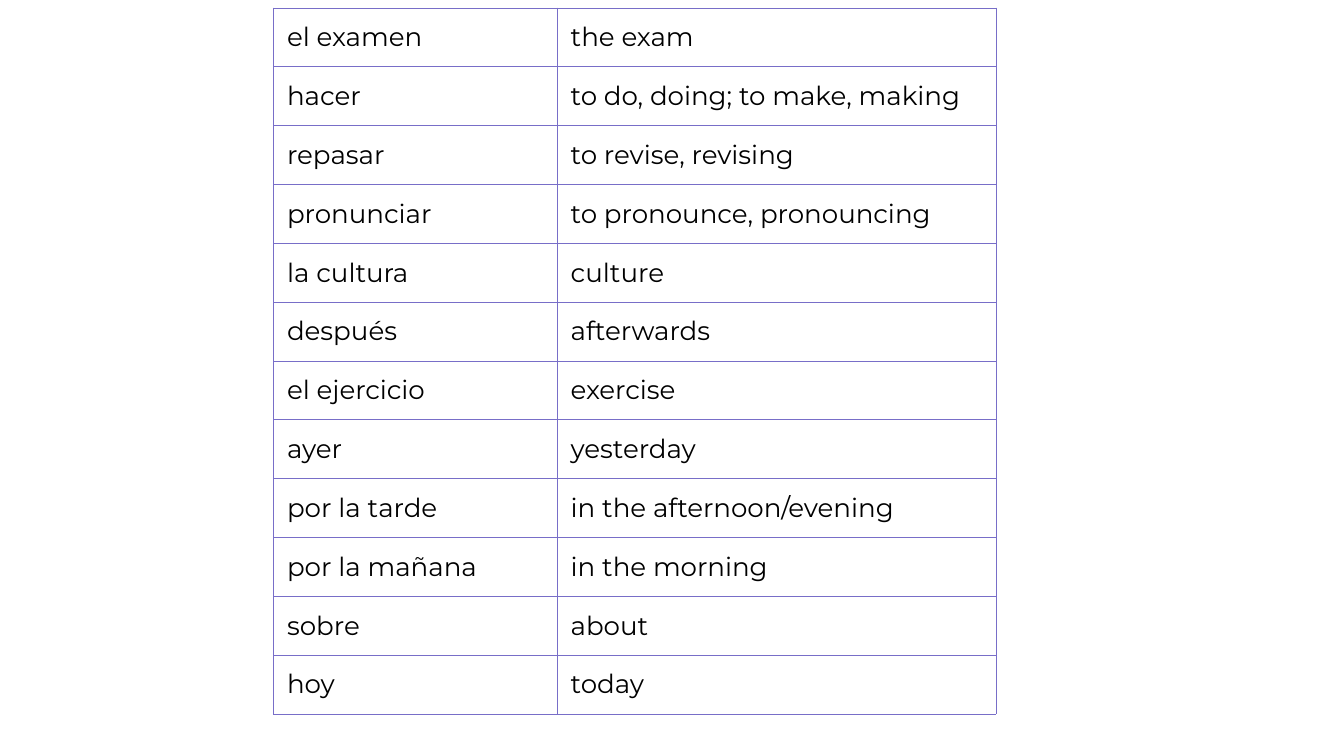
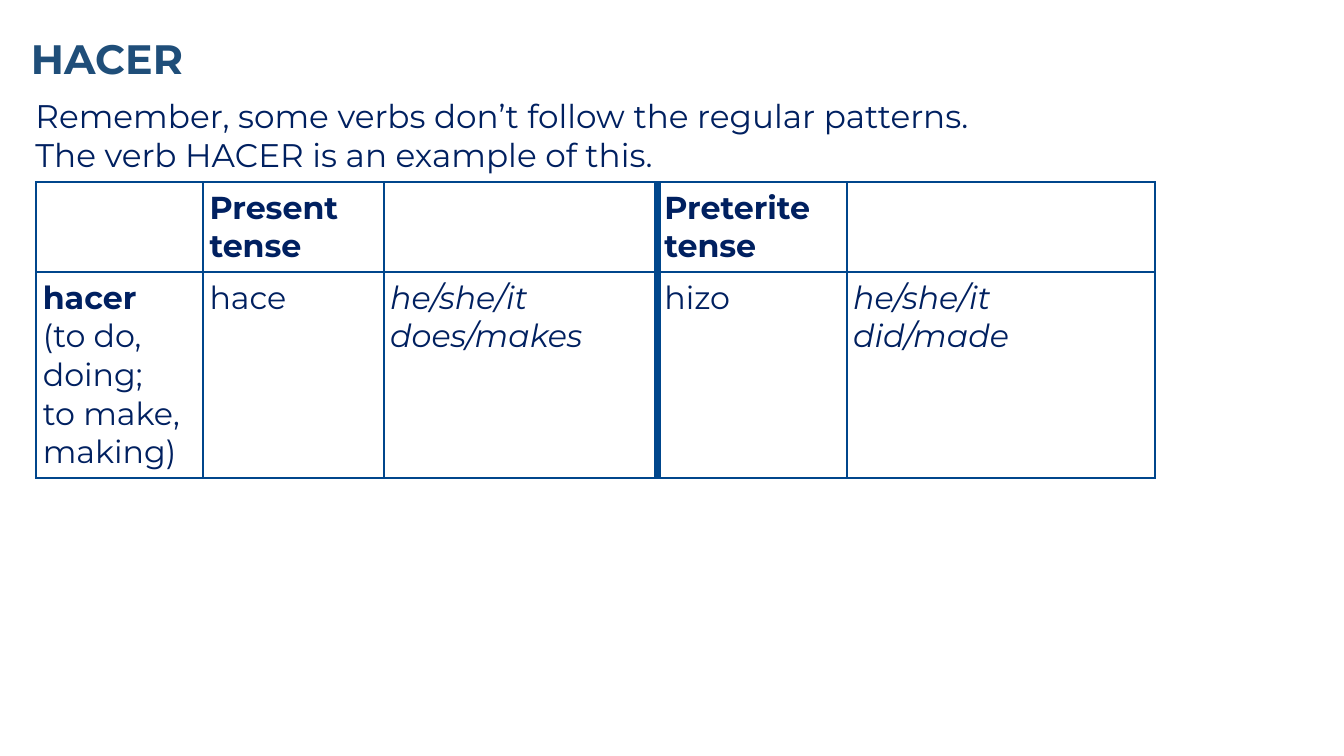
from dataclasses import dataclass
from itertools import product

from lxml import etree
from pptx import Presentation
from pptx.dml.color import RGBColor
from pptx.oxml import ns
from pptx.util import Cm, Pt


@dataclass(frozen=True)
class Theme:
    face: str = "Montserrat"
    black: str = "000000"
    navy: str = "002060"
    blue: str = "1F4E79"
    white: str = "FFFFFF"
    grid: str = "00468C"
    violet: str = "786EC8"
    title: int = 44
    intro: int = 35
    verb: int = 34
    word: int = 28
    thin: float = 0.75
    line: float = 2.25
    thick: float = 9


T = Theme()

WORDS = [
    ("el examen", "the exam"),
    ("hacer", "to do, doing; to make, making"),
    ("repasar", "to revise, revising"),
    ("pronunciar", "to pronounce, pronouncing"),
    ("la cultura", "culture"),
    ("después", "afterwards"),
    ("el ejercicio", "exercise"),
    ("ayer", "yesterday"),
    ("por la tarde", "in the afternoon/evening"),
    ("por la mañana", "in the morning"),
    ("sobre", "about"),
    ("hoy", "today"),
]

BOLD = {"bold": True}
ITALIC = {"italic": True}
INTRO = [
    "Remember, some verbs don’t follow the regular patterns.",
    "The verb HACER is an example of this.",
]
# Each cell is a list of (line, format) pairs.
VERBS = [
    [[], [("Present", BOLD), ("tense", BOLD)], [],
     [("Preterite", BOLD), ("tense", BOLD)], []],
    [[("hacer", BOLD), ("(to do, doing;", {}), ("to make, making)", {})],
     [("hace", {})], [("he/she/it does/makes", ITALIC)],
     [("hizo", {})], [("he/she/it did/made", ITALIC)]],
]


def write(frame, lines, size, color, space=None):
    """Fill a text frame with (line, format) pairs, one paragraph each."""
    for i, (line, style) in enumerate(lines):
        para = frame.paragraphs[0] if i == 0 else frame.add_paragraph()
        para.line_spacing = space
        font = para.add_run().font
        para.runs[0].text = line
        look = {"name": T.face, "size": Pt(size), "bold": False, "italic": False}
        for key, value in (look | style).items():
            setattr(font, key, value)
        font.color.rgb = RGBColor.from_string(color)


def add_text(slide, box, lines, size, color, pad=(0, 0), space=None):
    frame = slide.shapes.add_textbox(*map(Cm, box)).text_frame
    frame.word_wrap = True
    for side, gap in zip(("left", "top", "right", "bottom"), pad * 2):
        setattr(frame, f"margin_{side}", Cm(gap))
    write(frame, lines, size, color, space)


def edge(cell, color, widths):
    """Draw the cell borders; widths go left, right, top, bottom."""
    props = cell._tc.get_or_add_tcPr()
    for i, (side, width) in enumerate(zip("LRTB", widths)):
        line = etree.Element(ns.qn(f"a:ln{side}"), w=str(Pt(width)))
        fill = etree.SubElement(line, ns.qn("a:solidFill"))
        etree.SubElement(fill, ns.qn("a:srgbClr"), val=color)
        props.insert(i, line)


def add_grid(slide, spot, cols, rows, cells, size, color, ink, width, pad, split=None):
    """Draw a ruled table; split is the column that starts after a thick rule."""
    area = (*spot, sum(cols), sum(rows))
    table = slide.shapes.add_table(len(rows), len(cols), *map(Cm, area)).table
    table.first_row = table.horz_banding = False
    for col, span in zip(table.columns, cols):
        col.width = Cm(span)
    for row, span in zip(table.rows, rows):
        row.height = Cm(span)
    for r, c in product(range(len(rows)), range(len(cols))):
        cell = table.cell(r, c)
        cell.fill.solid()
        cell.fill.fore_color.rgb = RGBColor.from_string(T.white)
        for side in ("left", "right", "top", "bottom"):
            setattr(cell, f"margin_{side}", Cm(pad))
        left = T.thick if c == split else width
        right = T.thick if c + 1 == split else width
        edge(cell, ink, (left, right, width, width))
        write(cell.text_frame, cells[r][c], size, color)


def word_slide(slide, left, top):
    cells = [[[(word, {})] for word in pair] for pair in WORDS]
    add_grid(slide, (left, top), (10.72, 16.59), [2.22] * len(WORDS), cells,
             T.word, T.black, T.violet, T.thin, 0.51)


def verb_slide(slide, left, top):
    add_text(slide, (left + 0.08, top, 46.69, 4.52), [("HACER", BOLD)],
             T.title, T.blue, space=1.15)
    add_text(slide, (left, top + 2.49, 48.62, 2.03),
             [(line, {}) for line in INTRO], T.intro, T.navy, (0.25, 0.13))
    add_grid(slide, (left + 0.28, top + 5.89), (6.3, 6.83, 10.36, 7.14, 11.66),
             (3.4, 7.8), VERBS, T.verb, T.navy, T.grid, T.line, 0.25, split=3)


def main():
    deck = Presentation()
    deck.slide_width, deck.slide_height = Cm(50.8), Cm(28.58)
    blank = deck.slide_layouts[6]
    word_slide(deck.slides.add_slide(blank), 10.34, 0.3)
    verb_slide(deck.slides.add_slide(blank), 1.09, 0.99)
    deck.save("out.pptx")


if __name__ == "__main__":
    main()
